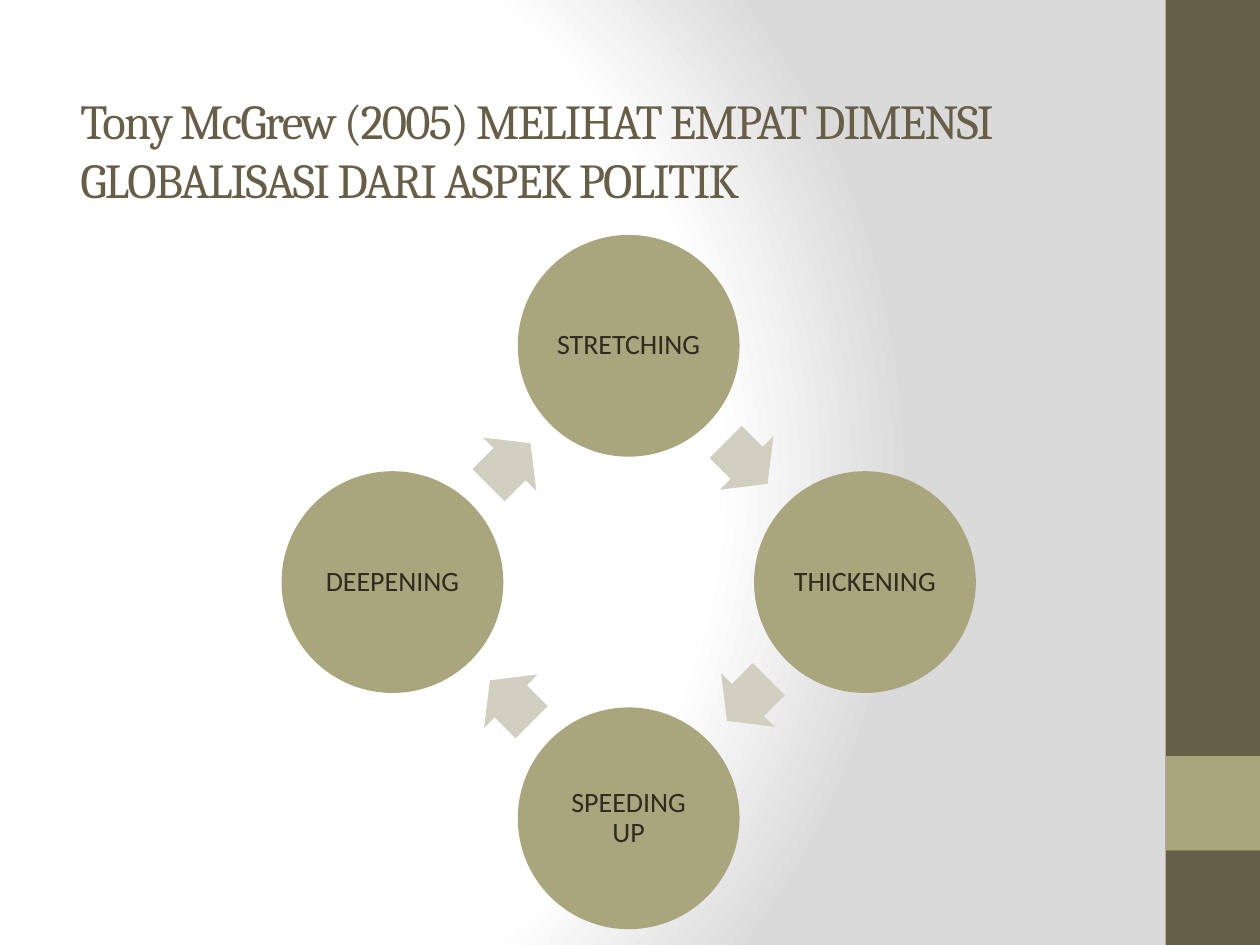
from math import cos, radians, sin

from lxml import etree
from pptx import Presentation
from pptx.dml.color import RGBColor
from pptx.enum.shapes import MSO_SHAPE as SHAPE
from pptx.enum.text import MSO_ANCHOR as ANCHOR, PP_ALIGN as ALIGN
from pptx.util import Inches, Pt

TITLE = "Tony McGrew (2005) MELIHAT EMPAT DIMENSI GLOBALISASI DARI ASPEK POLITIK"
DIMENSIONS = ["STRETCHING", "THICKENING", "SPEEDING UP", "DEEPENING"]  # clockwise from top
SIDEBAR = [((9.25, 0, 0.75, 7.5), "675E47"), ((9.25, 6, 0.75, 0.75), "A9A57C")]

CENTER = (4.99, 4.62)
RING, CIRCLE = 1.875, 1.76
ARROW_RING, ARROW_LAG, ARROW_W, ARROW_H = 1.33, 0.3, 0.47, 0.6

BACKGROUND = """
<p:bg xmlns:p="http://schemas.openxmlformats.org/presentationml/2006/main"
      xmlns:a="http://schemas.openxmlformats.org/drawingml/2006/main">
  <p:bgPr>
    <a:gradFill rotWithShape="1">
      <a:gsLst>
        <a:gs pos="0"><a:srgbClr val="FFFFFF"/></a:gs>
        <a:gs pos="75000"><a:srgbClr val="FFFFFF"/></a:gs>
        <a:gs pos="100000"><a:srgbClr val="DADADA"/></a:gs>
      </a:gsLst>
      <a:path path="circle">
        <a:fillToRect l="20000" t="50000" r="100000" b="50000"/>
      </a:path>
    </a:gradFill>
    <a:effectLst/>
  </p:bgPr>
</p:bg>"""


def color(hex_string):
    return RGBColor.from_string(hex_string)


def add_filled(slide, kind, box, fill):
    sp = slide.shapes.add_shape(kind, *map(Inches, box))
    sp.shadow.inherit = False
    sp.fill.solid()
    sp.fill.fore_color.rgb = color(fill)
    sp.line.fill.background()
    return sp


def write(sp, text, size, font, fill, align, anchor, insets):
    """Put one styled paragraph in a shape; insets are left, top, right, bottom."""
    tf = sp.text_frame
    tf.word_wrap = True
    tf.vertical_anchor = anchor
    for side, inset in zip(("left", "top", "right", "bottom"), insets):
        setattr(tf, f"margin_{side}", Inches(inset))
    p = tf.paragraphs[0]
    p.alignment = align
    r = p.add_run()
    r.text = text
    for name, value in {"size": Pt(size), "name": font}.items():
        setattr(r.font, name, value)
    r.font.color.rgb = color(fill)
    return p


def box_on_ring(radius, angle, w, h):
    """Box centred on the ring, angle in degrees clockwise from the top."""
    x = CENTER[0] + radius * sin(radians(angle))
    y = CENTER[1] - radius * cos(radians(angle))
    return x - w / 2, y - h / 2, w, h


prs = Presentation()
prs.slide_width, prs.slide_height = Inches(10), Inches(7.5)
slide = prs.slides.add_slide(prs.slide_layouts[6])
slide.shapes.element.getparent().insert(0, etree.fromstring(BACKGROUND))

for box, fill in SIDEBAR:
    add_filled(slide, SHAPE.RECTANGLE, box, fill)

title = slide.shapes.add_textbox(*map(Inches, (0.54, 0.99, 8.5, 1.04)))
p = write(title, TITLE, 27.9, "Cambria", "675E47", ALIGN.LEFT, ANCHOR.BOTTOM,
          (0.1, 0.05, 0.1, 0.38))
p.runs[0].font._element.set("spc", "-100")

step = 360 / len(DIMENSIONS)
for i, name in enumerate(DIMENSIONS):
    angle = i * step
    circle = add_filled(slide, SHAPE.OVAL, box_on_ring(RING, angle, CIRCLE, CIRCLE), "A9A57C")
    p = write(circle, name, 16, "Calibri", "2F2B20", ALIGN.CENTER, ANCHOR.MIDDLE, [0.02] * 4)
    p.line_spacing = 0.9

    turn = angle + step / 2
    arrow = add_filled(slide, SHAPE.RIGHT_ARROW,
                       box_on_ring(ARROW_RING, turn - ARROW_LAG, ARROW_W, ARROW_H), "D1CFBF")
    arrow.rotation = turn
    arrow.adjustments[0], arrow.adjustments[1] = 0.6, 0.5

prs.save("out.pptx")
